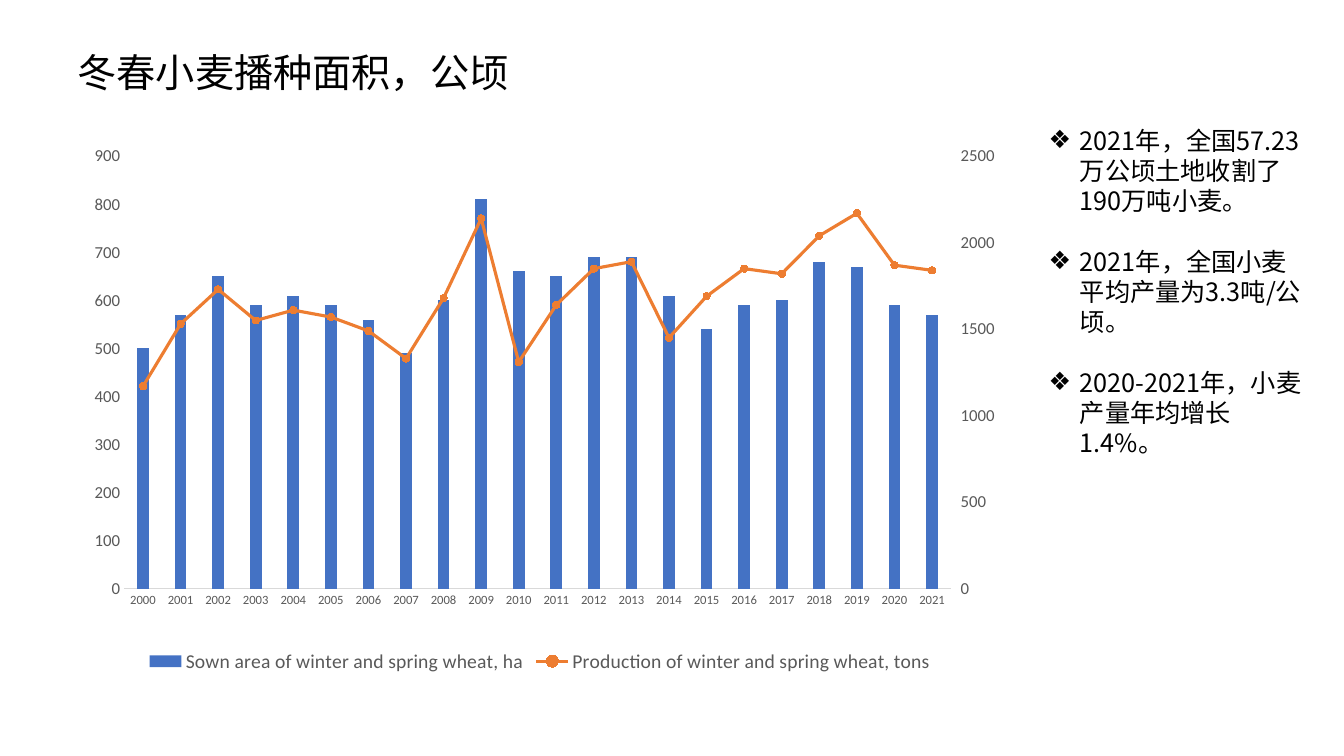
from copy import deepcopy

from lxml import etree
from pptx import Presentation
from pptx.chart.data import CategoryChartData
from pptx.dml.color import RGBColor
from pptx.enum.chart import XL_CHART_TYPE, XL_LEGEND_POSITION, XL_MARKER_STYLE, XL_TICK_MARK
from pptx.enum.text import MSO_ANCHOR, MSO_AUTO_SIZE, PP_ALIGN
from pptx.oxml import parse_xml
from pptx.oxml.ns import nsdecls, qn
from pptx.util import Inches, Pt

COLUMNS = XL_CHART_TYPE.COLUMN_CLUSTERED
LEGEND_BOTTOM = XL_LEGEND_POSITION.BOTTOM
CIRCLE = XL_MARKER_STYLE.CIRCLE
NO_TICK = XL_TICK_MARK.NONE
LEFT = PP_ALIGN.LEFT
MIDDLE, TOP = MSO_ANCHOR.MIDDLE, MSO_ANCHOR.TOP
NO_AUTOFIT = MSO_AUTO_SIZE.NONE

# Content
TITLE = "冬春小麦播种面积，公顷"
FINDINGS = [
    "2021年，全国57.23万公顷土地收割了190万吨小麦。",
    "2021年，全国小麦平均产量为3.3吨/公顷。",
    "2020-2021年，小麦产量年均增长1.4%。",
]
YEARS = [str(year) for year in range(2000, 2022)]
AREA_NAME = "Sown area of winter and spring wheat, ha"
AREA = [500, 570, 650, 590, 610, 590, 560, 490, 600, 810, 660,
        650, 690, 690, 610, 540, 590, 600, 680, 670, 590, 570]
PRODUCTION_NAME = "Production of winter and spring wheat, tons"
PRODUCTION = [1170, 1530, 1730, 1550, 1610, 1570, 1490, 1330, 1680, 2140, 1310,
              1640, 1850, 1890, 1450, 1690, 1850, 1820, 2040, 2170, 1870, 1840]

# Style and places (left, top, width, height in inches)
COLORS = {"text": "000000", "label": "595959", "axis": "D9D9D9",
          "area": "4472C4", "production": "ED7D31"}
TEXT_FONT, CHART_FONT = "Noto Sans CJK SC", "Calibri"
TITLE_BOX = (0.67, 0.43, 6.83, 0.57)
CHART_BOX = (0.67, 1.39, 9.37, 5.33)
FINDINGS_BOX = (10.3, 1.19, 2.76, 4.95)
PLOT_LAYOUT = {"x": 0.06, "y": 0.03, "w": 0.875, "h": 0.805}
LINE_HEIGHT = 21.6
BULLET_INDENT = 0.31


def color(name):
    return RGBColor.from_string(COLORS[name])


def set_font(font, size, name, color_name):
    font.size, font.name = Pt(size), name
    font.color.rgb = color(color_name)


def write_text(shape, box, lines, size, anchor, wrap=True, bullet=None, line_height=None):
    shape.left, shape.top, shape.width, shape.height = map(Inches, box)
    frame = shape.text_frame
    frame.word_wrap, frame.auto_size, frame.vertical_anchor = wrap, NO_AUTOFIT, anchor
    for index, line in enumerate(lines):
        paragraph = frame.paragraphs[0] if index == 0 else frame.add_paragraph()
        paragraph.alignment = LEFT
        paragraph.space_before = Pt(0)
        if line_height:
            paragraph.line_spacing = paragraph.space_after = Pt(line_height)
        run = paragraph.add_run()
        run.text = line
        set_font(run.font, size, TEXT_FONT, "text")
        east_asian = etree.SubElement(run.font._element, qn("a:ea"))
        east_asian.set("typeface", TEXT_FONT)
        if bullet:
            properties = paragraph._p.get_or_add_pPr()
            properties.set("marL", str(Inches(BULLET_INDENT)))
            properties.set("indent", str(-Inches(BULLET_INDENT)))
            etree.SubElement(properties, qn("a:buChar")).set("char", bullet)


def set_value(parent, tag, value):
    parent.find(qn(tag)).set("val", str(value))


def remove_children(parent, tag):
    for child in parent.findall(qn(tag)):
        parent.remove(child)


def set_scale(axis, maximum, step):
    axis.minimum_scale, axis.maximum_scale, axis.major_unit = 0, maximum, step


def move_to_second_axis(plot_area):
    """Turn the second column series into a line on a right-hand axis."""
    bar_plot = plot_area.find(qn("c:barChart"))
    series = bar_plot.findall(qn("c:ser"))[1]
    remove_children(series, "c:invertIfNegative")
    line_plot = parse_xml(
        f'<c:lineChart {nsdecls("c")}><c:grouping val="stacked"/><c:varyColors val="0"/>'
        '<c:marker val="1"/><c:axId val="5001"/><c:axId val="5002"/></c:lineChart>')
    line_plot.insert(2, series)
    bar_plot.addnext(line_plot)

    left_axis = plot_area.find(qn("c:valAx"))
    hidden_axis = deepcopy(plot_area.find(qn("c:catAx")))
    right_axis = deepcopy(left_axis)
    left_axis.addnext(hidden_axis)
    hidden_axis.addnext(right_axis)
    for axis, own_id, other_id in ((hidden_axis, 5001, 5002), (right_axis, 5002, 5001)):
        set_value(axis, "c:axId", own_id)
        set_value(axis, "c:crossAx", other_id)
    set_value(hidden_axis, "c:delete", 1)
    set_value(right_axis, "c:axPos", "r")
    set_value(right_axis, "c:crosses", "max")
    set_value(right_axis, "c:majorTickMark", "out")
    set_value(right_axis, "c:majorUnit", 500)
    set_value(right_axis.find(qn("c:scaling")), "c:max", 2500)


def set_plot_layout(plot_area):
    remove_children(plot_area, "c:layout")
    modes = "".join(f'<c:{key}Mode val="edge"/>' for key in "xy")
    sizes = "".join(f'<c:{key} val="{value}"/>' for key, value in PLOT_LAYOUT.items())
    plot_area.insert(0, parse_xml(
        f'<c:layout {nsdecls("c")}><c:manualLayout><c:layoutTarget val="inner"/>'
        f'{modes}{sizes}</c:manualLayout></c:layout>'))


def add_wheat_chart(slide):
    data = CategoryChartData(number_format="0")
    data.categories = YEARS
    data.add_series(AREA_NAME, AREA)
    data.add_series(PRODUCTION_NAME, PRODUCTION)
    chart = slide.shapes.add_chart(COLUMNS, *map(Inches, CHART_BOX), data).chart
    chart.has_title = False
    set_font(chart.font, 10, CHART_FONT, "text")

    # Legend
    chart.has_legend = True
    chart.legend.position, chart.legend.include_in_layout = LEGEND_BOTTOM, False
    set_font(chart.legend.font, 14, CHART_FONT, "label")

    # Axes
    years_axis, area_axis = chart.category_axis, chart.value_axis
    for axis, size in ((years_axis, 9), (area_axis, 12)):
        axis.has_major_gridlines = False
        axis.major_tick_mark = axis.minor_tick_mark = NO_TICK
        set_font(axis.tick_labels.font, size, CHART_FONT, "label")
    years_axis.format.line.color.rgb = color("axis")
    years_axis.format.line.width = Pt(0.75)
    area_axis.format.line.fill.background()
    area_axis.tick_labels.number_format = "0"
    area_axis.tick_labels.number_format_is_linked = False
    set_scale(area_axis, 900, 100)

    plot_area = chart._chartSpace.chart.plotArea
    move_to_second_axis(plot_area)
    set_plot_layout(plot_area)

    # Series
    bars, lines = chart.plots
    bars.gap_width, bars.overlap, bars.vary_by_categories = 219, -27, False
    area_fill = bars.series[0].format.fill
    area_fill.solid()
    area_fill.fore_color.rgb = color("area")
    production = lines.series[0]
    production.smooth = False
    production.format.line.color.rgb = color("production")
    production.format.line.width = Pt(2.25)
    marker = production.marker
    marker.style, marker.size = CIRCLE, 5
    marker.format.fill.solid()
    marker.format.fill.fore_color.rgb = color("production")
    marker.format.line.color.rgb = color("production")


def main():
    presentation = Presentation()
    presentation.slide_width, presentation.slide_height = Inches(13.33), Inches(7.5)
    slide = presentation.slides.add_slide(presentation.slide_layouts[1])
    write_text(slide.shapes.title, TITLE_BOX, [TITLE], size=28, anchor=MIDDLE, wrap=False)
    add_wheat_chart(slide)
    write_text(slide.placeholders[1], FINDINGS_BOX, FINDINGS, size=18, anchor=TOP,
               bullet="❖", line_height=LINE_HEIGHT)
    presentation.save("out.pptx")


if __name__ == "__main__":
    main()
